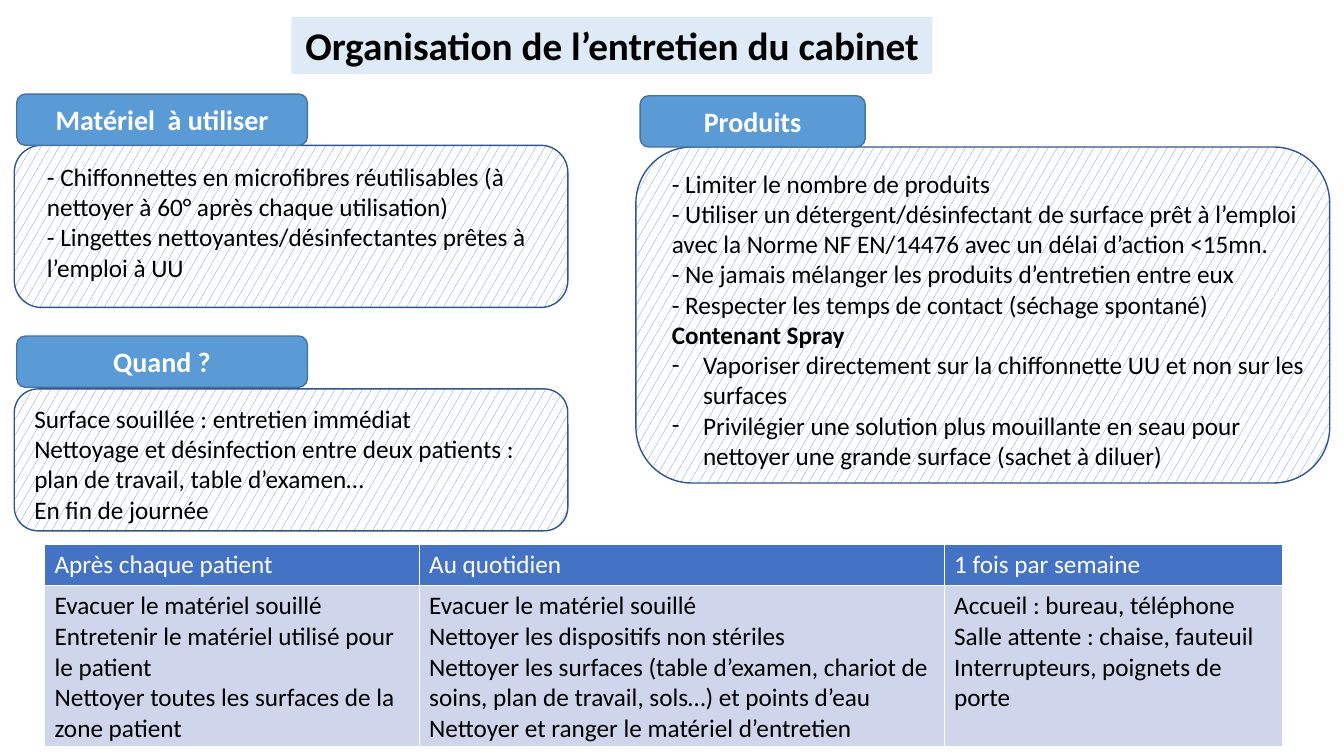
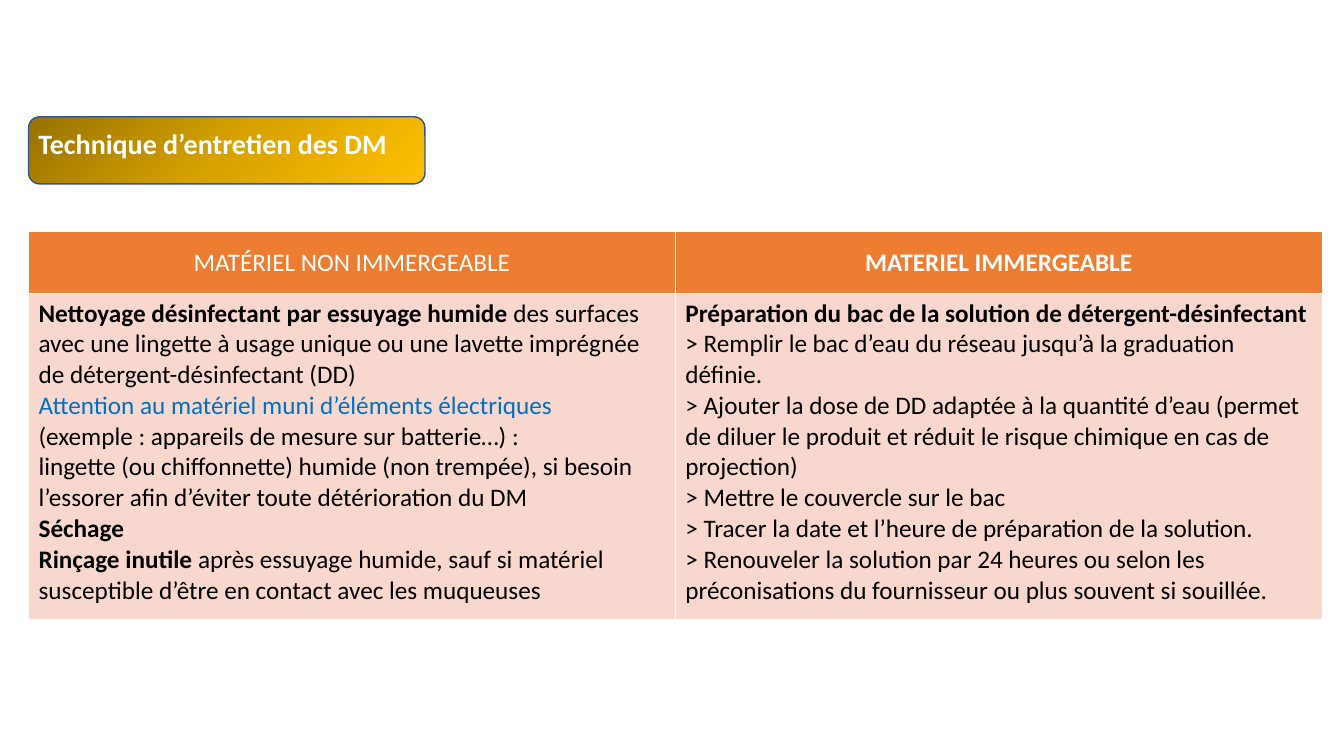
from copy import deepcopy
from dataclasses import dataclass

from pptx import Presentation
from pptx.dml.color import RGBColor
from pptx.enum.dml import MSO_PATTERN
from pptx.enum.shapes import MSO_SHAPE
from pptx.enum.text import MSO_ANCHOR, PP_ALIGN
from pptx.oxml.ns import qn
from pptx.oxml.xmlchemy import OxmlElement
from pptx.util import Inches, Pt

RECT, ROUNDED = MSO_SHAPE.RECTANGLE, MSO_SHAPE.ROUNDED_RECTANGLE
HATCH = MSO_PATTERN.SMALL_CONFETTI
LEFT, CENTER = PP_ALIGN.LEFT, PP_ALIGN.CENTER
TOP, MIDDLE = MSO_ANCHOR.TOP, MSO_ANCHOR.MIDDLE

# Shared style
FONT = "Calibri"
BODY, HEADING, TITLE = 18, 20, 28
COLORS = {
    "text": "000000", "white": "FFFFFF", "notice": "0070C0",
    "title_band": "DEEBF7", "tab": "5B9BD5", "tab_line": "43739E",
    "hatch": "4472C4", "panel_line": "325491",
    "blue_head": "4472C4", "blue_body": "CFD5EA",
    "orange_head": "ED7D31", "orange_body": "F8D7CE",
    "gold_dark": "977200", "gold_mid": "D7A200", "gold": "FFC000",
}

# Grid: 160 columns by 90 rows
SLIDE_W, SLIDE_H = Inches(13.33), Inches(7.5)
COLUMN, ROW = SLIDE_W / 160, SLIDE_H / 90
TAB_H = 6.1
DASH_INDENT = Inches(0.31)


@dataclass
class Line:
    """A paragraph made of (text, format) runs, with an optional dash bullet."""
    runs: list
    dash: bool = False


def plain(text):
    return Line([(text, {})])


def bold(text, rest=""):
    runs = [(text, {"strong": True})]
    return Line(runs + [(rest, {})] if rest else runs)


def dashed(text):
    return Line([(text, {})], dash=True)


def rgb(name):
    return RGBColor.from_string(COLORS[name])


def place(left, top, width, height):
    return (round(left * COLUMN), round(top * ROW),
            round(width * COLUMN), round(height * ROW))


def add_element(parent, tag, index=None, **attributes):
    element = OxmlElement(tag)
    for key, value in attributes.items():
        element.set(key, str(value))
    parent.insert(len(parent) if index is None else index, element)
    return element


def add_white_line(parent, tag, index, points):
    line = add_element(parent, tag, index, w=Pt(points))
    solid = add_element(line, "a:solidFill")
    add_element(solid, "a:srgbClr", val=COLORS["white"])


def write(frame, lines, size=BODY, color="text", strong=False, align=LEFT,
          anchor=TOP, wrap=True, outlined=False):
    frame.word_wrap = wrap
    frame.vertical_anchor = anchor
    fill_lines(frame, lines, size, color, strong, align, outlined)


def fill_lines(frame, lines, size, color, strong, align, outlined=False):
    for number, line in enumerate(lines):
        paragraph = frame.add_paragraph() if number else frame.paragraphs[0]
        paragraph.alignment = align
        if line.dash:
            properties = paragraph._p.get_or_add_pPr()
            properties.set("marL", str(DASH_INDENT))
            properties.set("indent", str(-DASH_INDENT))
            add_element(properties, "a:buFont", typeface=FONT)
            add_element(properties, "a:buChar", char="-")
        for text, own in line.runs:
            run = paragraph.add_run()
            run.text = text
            run.font.name = FONT
            run.font.size = Pt(size)
            run.font.bold = own.get("strong", strong)
            run.font.color.rgb = rgb(own.get("color", color))
            if outlined:
                add_white_line(run._r.get_or_add_rPr(), "a:ln", 0, 0.75)


def add_text(slide, box, lines, **text_format):
    frame = slide.shapes.add_textbox(*place(*box)).text_frame
    write(frame, lines, **text_format)


def add_block(slide, kind, box, line=None):
    block = slide.shapes.add_shape(kind, *place(*box))
    block.shadow.inherit = False
    if line:
        block.line.color.rgb = rgb(line)
        block.line.width = Pt(1)
    else:
        block.line.fill.background()
    return block


def add_title(slide, text, box):
    band = add_block(slide, RECT, box)
    band.fill.solid()
    band.fill.fore_color.rgb = rgb("title_band")
    write(band.text_frame, [plain(text)], size=TITLE, strong=True,
          align=CENTER, wrap=False, outlined=True)


def add_section(slide, heading, tab, panel, body, lines):
    """Hatched panel with its text and a heading tab; tab is left, top, width."""
    backdrop = add_block(slide, ROUNDED, panel, "panel_line")
    backdrop.fill.patterned()
    backdrop.fill.pattern = HATCH
    backdrop.fill.fore_color.rgb = rgb("hatch")
    backdrop.fill.back_color.rgb = rgb("white")
    add_text(slide, body, lines)

    label = add_block(slide, ROUNDED, (*tab, TAB_H), "tab_line")
    label.fill.solid()
    label.fill.fore_color.rgb = rgb("tab")
    write(label.text_frame, [plain(heading)], size=HEADING, color="white",
          strong=True, align=CENTER, anchor=MIDDLE)


def add_gold_label(slide, text, box, text_box):
    label = add_block(slide, ROUNDED, box, "panel_line")
    label.fill.gradient()
    label.fill.gradient_angle = 315
    stops = label._element.spPr.find(".//" + qn("a:gsLst"))
    stops.insert(1, deepcopy(stops[0]))
    shades = ("gold_dark", "gold_mid", "gold")
    for number, (stop, shade) in enumerate(zip(label.fill.gradient_stops, shades)):
        stop.position = number / 2
        stop.color.rgb = rgb(shade)
    add_text(slide, text_box, [plain(text)], size=HEADING, color="white",
             strong=True, wrap=False)


def fill_cell(cell, lines, fill, color, align, anchor):
    cell.fill.solid()
    cell.fill.fore_color.rgb = rgb(fill)
    cell.vertical_anchor = anchor
    properties = cell._tc.get_or_add_tcPr()
    for index, side in enumerate("LRTB"):
        add_white_line(properties, f"a:ln{side}", index, 1)
    fill_lines(cell.text_frame, lines, BODY, color, False, align)


def add_grid(slide, corner, widths, heights, heads, bodies, hue,
             head_align=LEFT, head_anchor=TOP):
    box = place(*corner, sum(widths), sum(heights))
    table = slide.shapes.add_table(2, len(widths), *box).table
    table.horz_banding = False
    for row, height in zip(table.rows, heights):
        row.height = round(height * ROW)
    for index, width in enumerate(widths):
        table.columns[index].width = round(width * COLUMN)
        fill_cell(table.cell(0, index), [heads[index]], hue + "_head", "white",
                  head_align, head_anchor)
        fill_cell(table.cell(1, index), bodies[index], hue + "_body", "text",
                  LEFT, TOP)


def build_organisation(slide):
    add_title(slide, "Organisation de l’entretien du cabinet",
              (34.7, 2, 76.3, 6.8))

    # Equipment, timing and products
    add_section(
        slide, "Matériel  à utiliser", (2, 11.2, 34.6),
        (1.7, 17.3, 65.9, 19.3), (4.4, 18.6, 60.5, 15.7),
        [plain("- Chiffonnettes en microfibres réutilisables (à nettoyer à 60° "
               "après chaque utilisation)"),
         plain("- Lingettes nettoyantes/désinfectantes prêtes à l’emploi à UU")])
    add_section(
        slide, "Quand ?", (2, 40, 34.6),
        (1.7, 46.3, 65.9, 16.9), (2.9, 47.4, 63.2, 15.7),
        [plain("Surface souillée : entretien immédiat"),
         plain("Nettoyage et désinfection entre deux patients : plan de travail, "
               "table d’examen…"),
         plain("En fin de journée")])
    add_section(
        slide, "Produits", (76.2, 11.4, 26.8),
        (75.7, 17.5, 82.6, 40), (78.8, 19.4, 79.4, 37.6),
        [plain("- Limiter le nombre de produits"),
         plain("- Utiliser un détergent/désinfectant de surface prêt à l’emploi "
               "avec la Norme NF EN/14476 avec un délai d’action <15mn."),
         plain("- Ne jamais mélanger les produits d’entretien entre eux"),
         plain("- Respecter les temps de contact (séchage spontané)"),
         bold("Contenant Spray"),
         dashed("Vaporiser directement sur la chiffonnette UU et non sur les "
                "surfaces"),
         dashed("Privilégier une solution plus mouillante en seau pour nettoyer "
                "une grande surface (sachet à diluer)")])

    # Cleaning schedule
    schedule = {
        "Après chaque patient": [
            "Evacuer le matériel souillé",
            "Entretenir le matériel utilisé pour le patient",
            "Nettoyer toutes les surfaces de la zone patient"],
        "Au quotidien": [
            "Evacuer le matériel souillé",
            "Nettoyer les dispositifs non stériles",
            "Nettoyer les surfaces (table d’examen, chariot de soins, plan de "
            "travail, sols…) et points d’eau",
            "Nettoyer et ranger le matériel d’entretien"],
        "1 fois par semaine": [
            "Accueil : bureau, téléphone",
            "Salle attente : chaise, fauteuil",
            "Interrupteurs, poignets de porte"],
    }
    add_grid(slide, (5.3, 64.8), (44.6, 62.5, 40.3), (4.9, 19.2),
             [plain(moment) for moment in schedule],
             [[plain(task) for task in tasks] for tasks in schedule.values()],
             "blue")


def build_technique(slide):
    add_gold_label(slide, "Technique d’entretien des DM",
                   (3.4, 13.9, 47.2, 8), (3.4, 14.5, 44.3, 5.3))

    # Methods by type of equipment
    wiping = [
        bold("Nettoyage désinfectant par essuyage humide ",
             "des surfaces avec une lingette à usage unique ou une lavette "
             "imprégnée de détergent-désinfectant (DD)"),
        Line([("Attention au matériel muni d’éléments électriques",
               {"color": "notice"})]),
        plain("(exemple : appareils de mesure sur batterie…) :"),
        plain("lingette (ou chiffonnette) humide (non trempée), si besoin "
              "l’essorer afin d’éviter toute détérioration du DM"),
        bold("Séchage"),
        bold("Rinçage inutile ",
             "après essuyage humide, sauf si matériel susceptible d’être en "
             "contact avec les muqueuses"),
    ]
    soaking = [
        bold("Préparation du bac de la solution de détergent-désinfectant"),
        plain("> Remplir le bac d’eau du réseau jusqu’à la graduation"),
        plain("définie."),
        plain("> Ajouter la dose de DD adaptée à la quantité d’eau (permet de "
              "diluer le produit et réduit le risque chimique en cas de "
              "projection)"),
        plain("> Mettre le couvercle sur le bac"),
        plain("> Tracer la date et l’heure de préparation de la solution."),
        plain("> Renouveler la solution par 24 heures ou selon les "
              "préconisations du fournisseur ou plus souvent si souillée."),
    ]
    add_grid(slide, (3.4, 27.6), (77, 77), (7.3, 38.9),
             [plain("MATÉRIEL NON IMMERGEABLE"), bold("MATERIEL IMMERGEABLE")],
             [wiping, soaking], "orange", CENTER, MIDDLE)


def main():
    deck = Presentation()
    deck.slide_width, deck.slide_height = SLIDE_W, SLIDE_H
    for build in (build_organisation, build_technique):
        build(deck.slides.add_slide(deck.slide_layouts[6]))
    deck.save("out.pptx")


if __name__ == "__main__":
    main()
